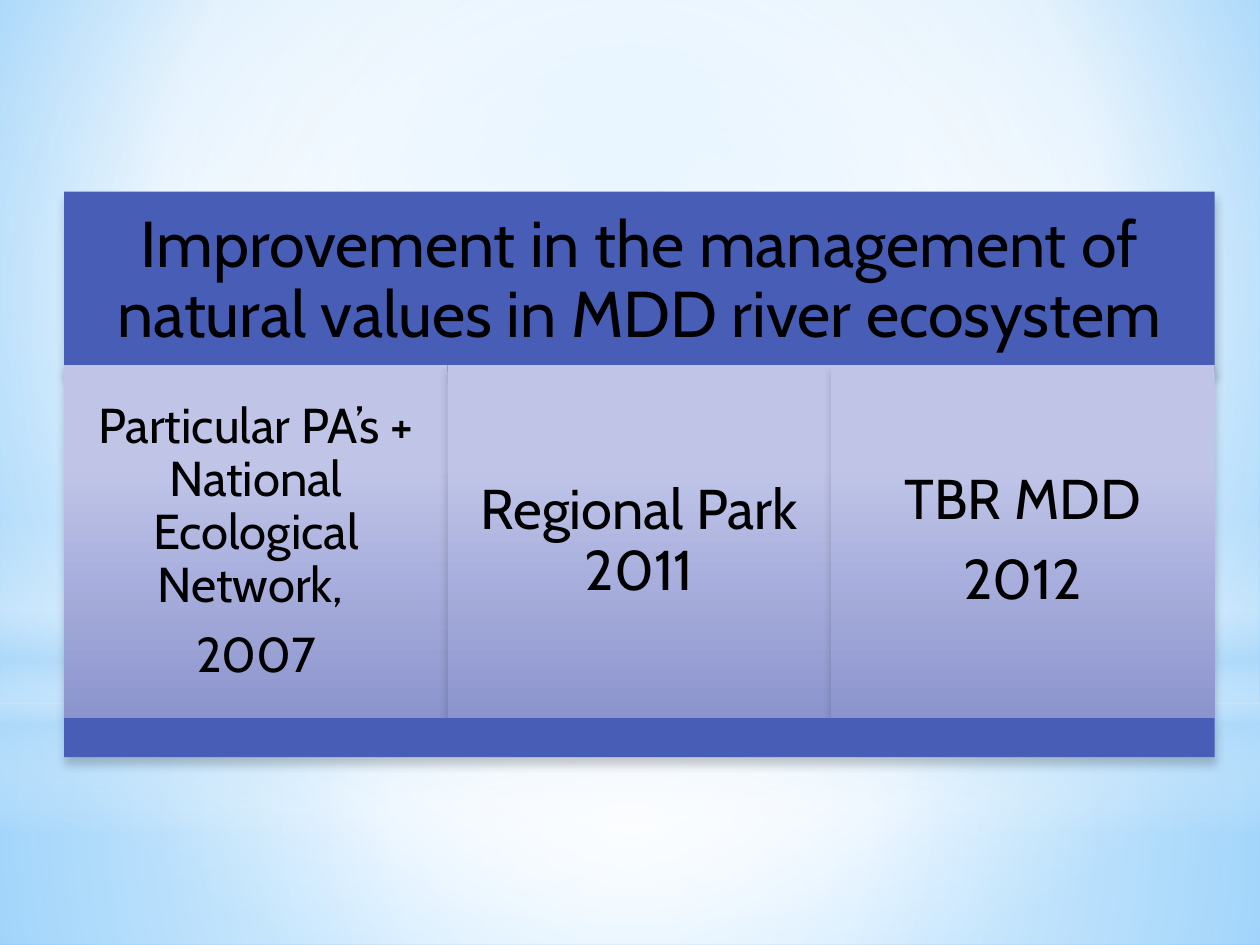
import pptx
import pptx.dml.color
import pptx.enum.shapes
import pptx.enum.text
import pptx.oxml.ns
import pptx.util
from lxml import etree

Inches = pptx.util.Inches
Pt = pptx.util.Pt
RGBColor = pptx.dml.color.RGBColor
qn = pptx.oxml.ns.qn
RECTANGLE = pptx.enum.shapes.MSO_SHAPE.RECTANGLE
OVAL = pptx.enum.shapes.MSO_SHAPE.OVAL

WHITE = RGBColor(0xFF, 0xFF, 0xFF)
BLACK = RGBColor(0, 0, 0)
PALE_BLUE = RGBColor(0xB4, 0xDC, 0xFA)
SKY = RGBColor(0x9E, 0xD5, 0xFF)
DEEP_SKY = RGBColor(0x5B, 0xB9, 0xFF)
INDIGO = RGBColor(0x47, 0x5D, 0xB6)
LILAC = RGBColor(0xC0, 0xC5, 0xE8)
VIOLET = RGBColor(0x8C, 0x94, 0xCE)
FONT = "Cabin"

TITLE = "Improvement in the management of natural values in MDD river ecosystem"
COLUMNS = [
    (["Particular PA’s + National Ecological Network, ", "2007"], 28, 0.12),
    (["Regional Park 2011"], 32, 0.13),
    (["TBR MDD", "2012"], 32, 0.13),
]
CENTER = (50, 50, 50, 50)
BACKGROUND_STOPS = [(0, SKY, 78), (60, WHITE, 100), (100, DEEP_SKY, 100)]
COLUMN_STOPS = [(28, LILAC, 100), (100, VIOLET, 100)]
GLOWS = [
    (RECTANGLE, (0, 5.58, 10, 1.92),
     [(0, WHITE, 91), (37, WHITE, 76), (100, PALE_BLUE, 79)], CENTER),
    (RECTANGLE, (0, 0, 10, 5.58),
     [(0, WHITE, 89), (48, WHITE, 62), (100, PALE_BLUE, 79)], CENTER),
    (RECTANGLE, (0, 4.12, 10, 2.5),
     [(0, WHITE, 0), (29, WHITE, 30), (45, PALE_BLUE, 40),
      (55, WHITE, 26), (65, PALE_BLUE, 60), (100, WHITE, 0)], None),
    (OVAL, (0, 1.75, 10, 5.58), [(0, WHITE, 100), (56, WHITE, 0)], CENTER),
]
LEFT, WIDTH = 0.51, 9.13
HEADER_TOP, HEADER_HEIGHT = 1.52, 1.43
COLUMN_TOP, COLUMN_HEIGHT = 2.9, 2.8
FOOTER_HEIGHT = 0.31


def add_element(parent, tag, **attributes):
    values = {key: str(value) for key, value in attributes.items()}
    return etree.SubElement(parent, qn(tag), values)


def add_color(parent, color, opacity):
    element = add_element(parent, "a:srgbClr", val=color)
    if opacity < 100:
        add_element(element, "a:alpha", val=opacity * 1000)


def set_gradient(fill, element, stops, focus=None):
    fill.solid()
    solid = next(element.iter(qn("a:solidFill")))
    gradient = etree.Element(qn("a:gradFill"), rotWithShape="1")
    stop_list = add_element(gradient, "a:gsLst")
    for position, color, opacity in stops:
        stop = add_element(stop_list, "a:gs", pos=position * 1000)
        add_color(stop, color, opacity)
    if focus:
        circle = add_element(gradient, "a:path", path="circle")
        sides = {side: value * 1000 for side, value in zip("ltrb", focus)}
        add_element(circle, "a:fillToRect", **sides)
    else:
        add_element(gradient, "a:lin", ang=90 * 60000, scaled=0)
    solid.getparent().replace(solid, gradient)


def add_plain_shape(slide, kind, box):
    shape = slide.shapes.add_shape(kind, *map(Inches, box))
    shape.line.fill.background()
    shape.shadow.inherit = False
    return shape


def add_shadow(shape):
    shape.shadow.inherit = False
    effects = shape.element.spPr.find(qn("a:effectLst"))
    shadow = add_element(effects, "a:outerShdw", blurRad=Pt(5), dist=Pt(4),
                         dir=90 * 60000, algn="ctr", rotWithShape=0)
    add_color(shadow, BLACK, 20)


def write_text(shape, lines, size, inset):
    frame = shape.text_frame
    frame.word_wrap = True
    frame.auto_size = pptx.enum.text.MSO_AUTO_SIZE.NONE
    frame.vertical_anchor = pptx.enum.text.MSO_ANCHOR.MIDDLE
    frame.margin_left = frame.margin_right = Inches(inset)
    frame.margin_top = frame.margin_bottom = Inches(inset)
    for index, line in enumerate(lines):
        paragraph = frame.add_paragraph() if index else frame.paragraphs[0]
        paragraph.alignment = pptx.enum.text.PP_ALIGN.CENTER
        paragraph.line_spacing = 0.9
        paragraph.space_before = Pt(0)
        paragraph.space_after = Pt(0.35 * size)
        run = paragraph.add_run()
        run.text = line
        run.font.name = FONT
        run.font.size = Pt(size)
        run.font.color.rgb = BLACK


def add_header(slide):
    title = slide.shapes.title
    title.left, title.top = Inches(LEFT), Inches(HEADER_TOP)
    title.width, title.height = Inches(WIDTH), Inches(HEADER_HEIGHT)
    title.fill.solid()
    title.fill.fore_color.rgb = INDIGO
    add_shadow(title)
    write_text(title, [TITLE], 37, 0.15)
    slide.shapes.element.append(title.element)


def add_columns(slide):
    width = WIDTH / len(COLUMNS)
    for index, (lines, size, inset) in enumerate(COLUMNS):
        box = (LEFT + index * width, COLUMN_TOP, width, COLUMN_HEIGHT)
        column = add_plain_shape(slide, RECTANGLE, box)
        set_gradient(column.fill, column.element.spPr, COLUMN_STOPS)
        add_shadow(column)
        write_text(column, lines, size, inset)


def main():
    presentation = pptx.Presentation()
    presentation.slide_width = Inches(10)
    presentation.slide_height = Inches(7.5)
    slide = presentation.slides.add_slide(presentation.slide_layouts[5])
    set_gradient(slide.background.fill, slide.element, BACKGROUND_STOPS,
                 (20, 10, 20, 60))
    for kind, box, stops, focus in GLOWS:
        glow = add_plain_shape(slide, kind, box)
        set_gradient(glow.fill, glow.element.spPr, stops, focus)
    add_header(slide)
    add_columns(slide)
    footer_box = (LEFT, COLUMN_TOP + COLUMN_HEIGHT, WIDTH, FOOTER_HEIGHT)
    footer = add_plain_shape(slide, RECTANGLE, footer_box)
    footer.fill.solid()
    footer.fill.fore_color.rgb = INDIGO
    add_shadow(footer)
    presentation.save("out.pptx")


if __name__ == "__main__":
    main()
